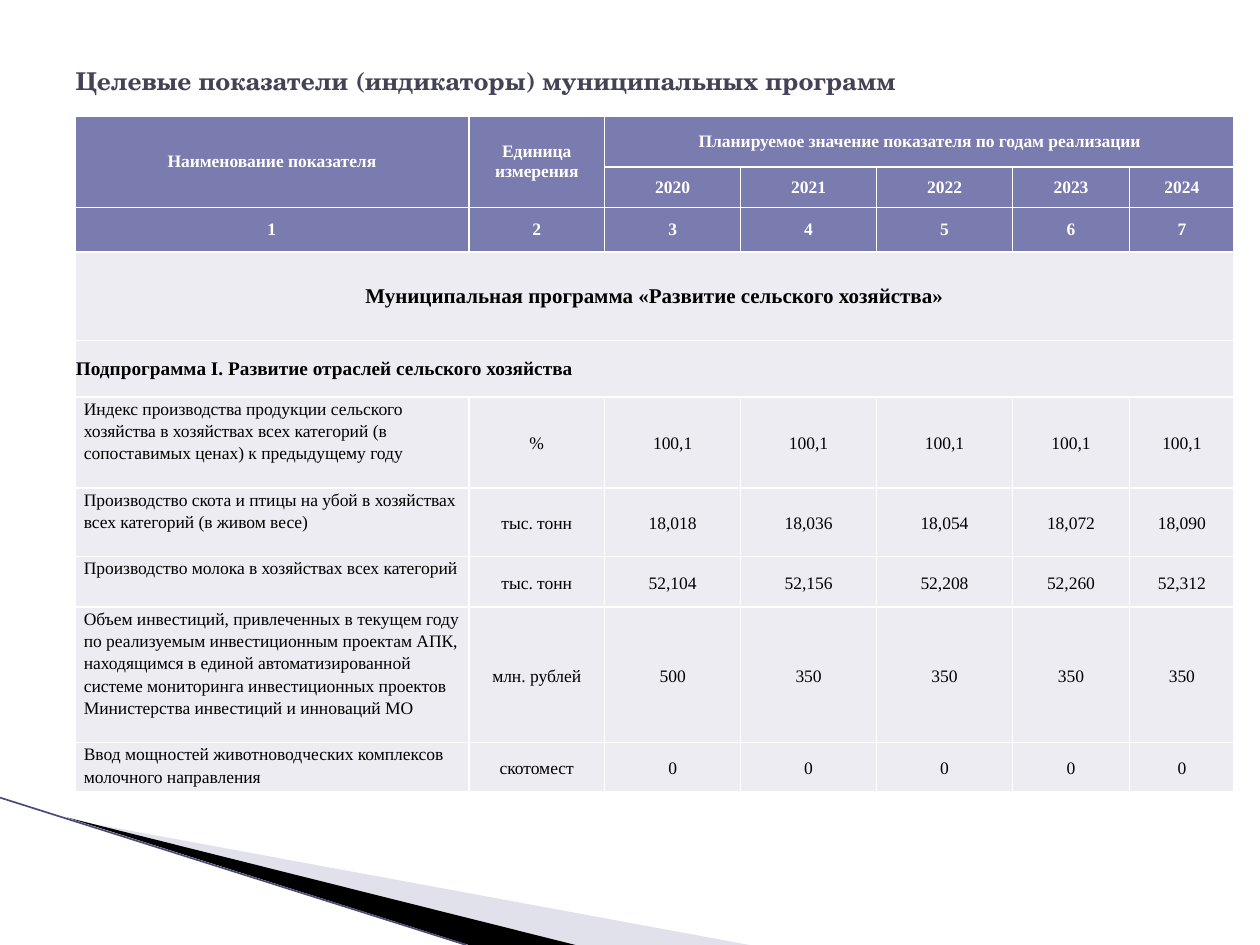
import pptx
import pptx.dml.color
import pptx.enum.shapes
import pptx.enum.text
import pptx.oxml
import pptx.oxml.ns
import pptx.util

Cm = pptx.util.Cm
Pt = pptx.util.Pt
RGBColor = pptx.dml.color.RGBColor
MIDDLE = pptx.enum.text.MSO_ANCHOR.MIDDLE
TOP = pptx.enum.text.MSO_ANCHOR.TOP
CENTER = pptx.enum.text.PP_ALIGN.CENTER
LEFT = pptx.enum.text.PP_ALIGN.LEFT
DRAWING_NS = pptx.oxml.ns.nsdecls("a")

WHITE = RGBColor(0xFF, 0xFF, 0xFF)
BLACK = RGBColor(0x00, 0x00, 0x00)
HEADING = RGBColor(0x42, 0x44, 0x56)
HEADER_FILL = RGBColor(0x7A, 0x7B, 0xAE)
BODY_FILL = RGBColor(0xEC, 0xEC, 0xF2)
WEDGE = RGBColor(0xB6, 0xB6, 0xD1)
EDGE = RGBColor(0x4B, 0x4A, 0x78)


def add_run(paragraph, text, font_name, size, color, bold):
    run = paragraph.add_run()
    run.text = text
    run.font.name = font_name
    run.font.size = Pt(size)
    run.font.bold = bold
    run.font.color.rgb = color


def fill_cell(cell, text, size=10, color=BLACK, bold=False, align=CENTER,
              anchor=MIDDLE, side_margin=0.18, spacing=1.15):
    cell.vertical_anchor = anchor
    cell.margin_left = cell.margin_right = Cm(side_margin)
    cell.margin_top = cell.margin_bottom = 0
    paragraph = cell.text_frame.paragraphs[0]
    paragraph.alignment = align
    paragraph.line_spacing = spacing
    add_run(paragraph, text, "Times New Roman", size, color, bold)


presentation = pptx.Presentation()
presentation.slide_width = Cm(25.4)
presentation.slide_height = Cm(19.05)
slide = presentation.slides.add_slide(presentation.slide_layouts[5])

# Corner decoration
wedges = [
    ([(1.4, 16.52), (15.11, 19.05), (11.58, 19.05)], WEDGE),
    ([(1.35, 16.48), (11.6, 19.05), (9.45, 19.05)], BLACK),
]
for corners, color in wedges:
    (start_x, start_y), *others = [(Cm(x), Cm(y)) for x, y in corners]
    builder = slide.shapes.build_freeform(start_x, start_y)
    builder.add_line_segments(others)
    wedge = builder.convert_to_shape()
    wedge.shadow.inherit = False
    wedge.line.fill.background()
    wedge.fill.solid()
    wedge.fill.fore_color.rgb = color
    if color == WEDGE:
        color_element = wedge.fill._xPr.find(".//" + pptx.oxml.ns.qn("a:srgbClr"))
        color_element.append(pptx.oxml.parse_xml(f'<a:alpha {DRAWING_NS} val="40000"/>'))

edge = slide.shapes.add_connector(
    pptx.enum.shapes.MSO_CONNECTOR.STRAIGHT, 0, Cm(16.08), Cm(9.4), Cm(19.05))
edge.line.color.rgb = EDGE
edge.line.width = Pt(0.95)
edge._element.spPr.append(pptx.oxml.parse_xml(f"<a:effectLst {DRAWING_NS}/>"))

# Title
title = slide.shapes.title
title.left, title.top, title.width, title.height = Cm(1.27), Cm(0.76), Cm(22.86), Cm(1.75)
title.text_frame.vertical_anchor = MIDDLE
title_paragraph = title.text_frame.paragraphs[0]
title_paragraph.alignment = LEFT
add_run(title_paragraph, "Целевые показатели (индикаторы) муниципальных программ",
        "TeX Gyre Schola", 14, HEADING, True)

# Indicator table
column_widths = [7.94, 2.74, 2.74, 2.74, 2.74, 2.36, 2.11]
row_heights = [1.03, 0.81, 0.9, 1.78, 1.14, 1.84, 1.38, 1.02, 2.73, 1]
HEADER_ROWS = 3
indicators = [
    ("Индекс производства продукции сельского хозяйства в хозяйствах всех категорий "
     "(в сопоставимых ценах) к предыдущему году",
     "%", "100,1", "100,1", "100,1", "100,1", "100,1"),
    ("Производство скота и птицы на убой в хозяйствах всех категорий (в живом весе)",
     "тыс. тонн", "18,018", "18,036", "18,054", "18,072", "18,090"),
    ("Производство молока в хозяйствах всех категорий",
     "тыс. тонн", "52,104", "52,156", "52,208", "52,260", "52,312"),
    ("Объем инвестиций, привлеченных в текущем году по реализуемым инвестиционным "
     "проектам АПК, находящимся в единой автоматизированной системе мониторинга "
     "инвестиционных проектов Министерства инвестиций и инноваций МО",
     "млн. рублей", "500", "350", "350", "350", "350"),
    ("Ввод мощностей животноводческих комплексов молочного направления",
     "скотомест", "0", "0", "0", "0", "0"),
]

table = slide.shapes.add_table(
    len(row_heights), len(column_widths), Cm(1.51), Cm(2.34),
    Cm(sum(column_widths)), Cm(sum(row_heights))).table
for column, width in zip(table.columns, column_widths):
    column.width = Cm(width)
for row, height in zip(table.rows, row_heights):
    row.height = Cm(height)

for row_index, row in enumerate(table.rows):
    for cell in row.cells:
        properties = cell._tc.get_or_add_tcPr()
        for side in ("lnL", "lnR", "lnT", "lnB"):
            properties.append(pptx.oxml.parse_xml(
                f'<a:{side} {DRAWING_NS} w="12700"><a:solidFill>'
                f'<a:srgbClr val="{WHITE}"/></a:solidFill></a:{side}>'))
        cell.fill.solid()
        cell.fill.fore_color.rgb = HEADER_FILL if row_index < HEADER_ROWS else BODY_FILL

merges = [(0, 0, 1, 0), (0, 1, 1, 1), (0, 2, 0, 6), (3, 0, 3, 6), (4, 0, 4, 6)]
for first_row, first_column, last_row, last_column in merges:
    table.cell(first_row, first_column).merge(table.cell(last_row, last_column))

headers = [
    (0, 0, "Наименование показателя"),
    (0, 1, "Единица измерения"),
    (0, 2, "Планируемое значение показателя по годам реализации"),
]
headers += [(1, index + 2, str(2020 + index)) for index in range(5)]
headers += [(2, index, str(index + 1)) for index in range(len(column_widths))]
for row_index, column_index, text in headers:
    fill_cell(table.cell(row_index, column_index), text, color=WHITE, bold=True,
              side_margin=0.02, spacing=1)

fill_cell(table.cell(3, 0), "Муниципальная программа «Развитие сельского хозяйства»",
          size=12, bold=True, side_margin=0.02, spacing=1)
fill_cell(table.cell(4, 0), "Подпрограмма I. Развитие отраслей сельского хозяйства",
          size=11, bold=True, align=LEFT, side_margin=0.02, spacing=1)

for row_index, (indicator, *values) in enumerate(indicators, start=5):
    fill_cell(table.cell(row_index, 0), indicator, align=LEFT, anchor=TOP)
    for column_index, value in enumerate(values, start=1):
        fill_cell(table.cell(row_index, column_index), value)

presentation.save("out.pptx")
